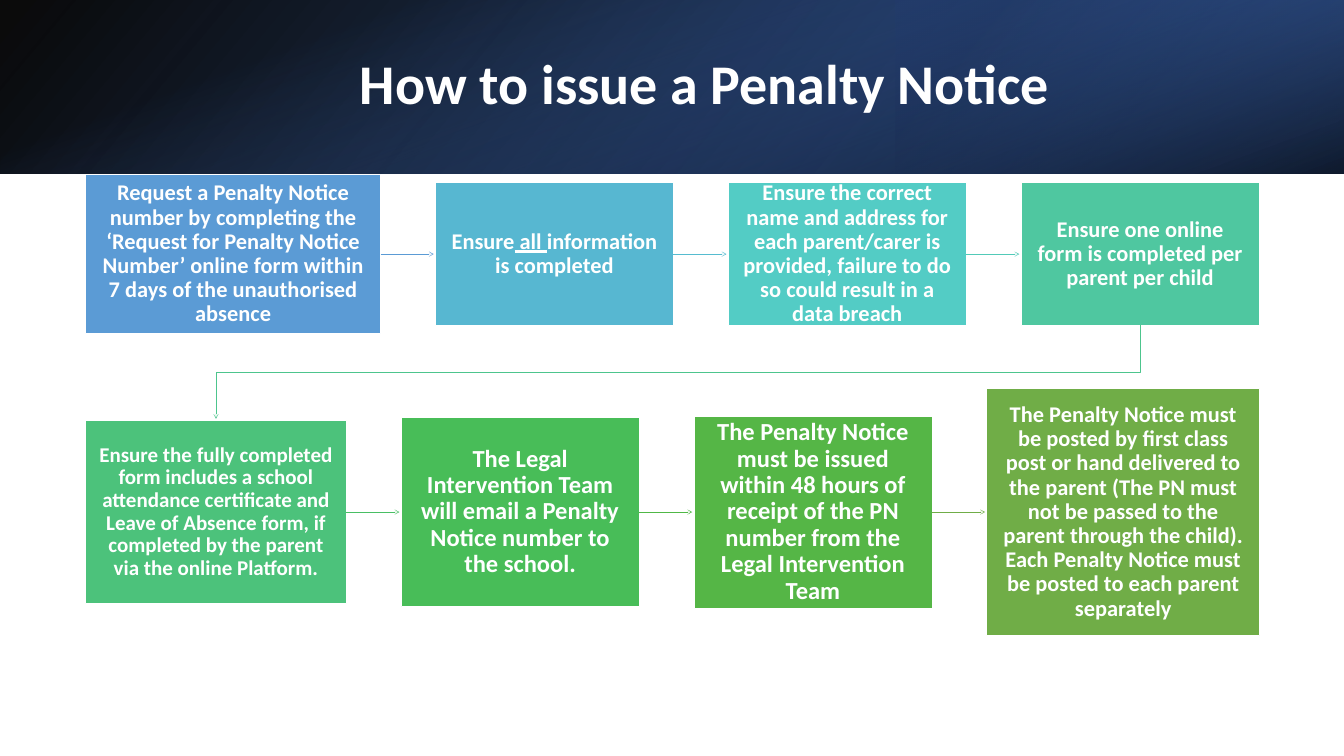
import pptx
import pptx.dml.color
import pptx.enum.shapes
import pptx.enum.text
import pptx.oxml.ns
import pptx.util
from lxml import etree

Pt = pptx.util.Pt
qn = pptx.oxml.ns.qn

COLORS = {
    "white": "FFFFFF", "black": "000000", "navy": "203864",
    "deep_blue": "2F5597", "royal": "4472C4",
    "blue": "5B9BD5", "sky": "57B7D1", "turquoise": "53CCC5", "mint": "4FC7A0",
    "jade": "4CC27B", "emerald": "48BD58", "grass": "55B646", "olive": "70AD47",
    "sky_line": "56BCD0", "turquoise_line": "52CAB8", "mint_line": "4DC58D",
    "emerald_line": "49BF64", "grass_line": "50B846",
}
SLIDE_W, SLIDE_H = 1919.52, 1080
HEADER_H = 248.4
LEFT, GAP = 122.4, 78.4
ARROW_CLEARANCE = 2.5

# Each step: text, width, height, font size, fill, colour of the arrow leaving it
ROWS = [
    (363, [
        ("Request a Penalty Notice number by completing the ‘Request for Penalty "
         "Notice Number’ online form within 7 days of the unauthorised absence",
         421.2, 226.8, 32, "blue", "blue"),
        ("Ensure_ all _information is completed",
         339.8, 204, 32, "sky", "sky_line"),
        ("Ensure the correct name and address for each parent/carer is provided, "
         "failure to do so could result in a data breach",
         339.8, 204, 32, "turquoise", "turquoise_line"),
        ("Ensure one online form is completed per parent per child",
         339.8, 204, 32, "mint", "mint_line"),
    ]),
    (731.5, [
        ("Ensure the fully completed form includes a school attendance certificate "
         "and Leave of Absence form, if completed by the parent via the online "
         "Platform.", 372.2, 261.4, 30, "jade", "emerald_line"),
        ("The Legal Intervention Team will email a Penalty Notice number to the "
         "school.", 339.8, 270.7, 35, "emerald", "grass_line"),
        ("The Penalty Notice must be issued within 48 hours of receipt of the PN "
         "number from the Legal Intervention Team",
         339.8, 274.3, 35, "grass", "olive"),
        ("The Penalty Notice must be posted by first class post or hand delivered "
         "to the parent (The PN must not be passed to the parent through the "
         "child). Each Penalty Notice must be posted to each parent separately",
         389.5, 353.5, 32, "olive", None),
    ]),
]


def rgb(name):
    return pptx.dml.color.RGBColor.from_string(COLORS[name])


def write(tf, text, *, size, font="Calibri", color="white", bold=True,
          spacing=0.9, inset=(7.2, 3.6)):
    """Write one centred paragraph; parts between underscores are underlined."""
    tf.word_wrap = True
    tf.vertical_anchor = pptx.enum.text.MSO_ANCHOR.MIDDLE
    tf.margin_left = tf.margin_right = Pt(inset[0])
    tf.margin_top = tf.margin_bottom = Pt(inset[1])
    p = tf.paragraphs[0]
    p.alignment = pptx.enum.text.PP_ALIGN.CENTER
    p.line_spacing = spacing
    for i, part in enumerate(text.split("_")):
        r = p.add_run()
        r.text = part
        r.font.name, r.font.size, r.font.bold = font, Pt(size), bold
        r.font.color.rgb = rgb(color)
        if i % 2:
            r.font.underline = True


class Deck:
    """Holds the current slide and the drawing style."""
    line_w = 0.5
    border_w = 1
    box_inset = (16.6, 17.3)

    def __init__(self, s):
        self.s = s

    def rect(self, x, y, w, h):
        sp = self.s.shapes.add_shape(
            pptx.enum.shapes.MSO_SHAPE.RECTANGLE, Pt(x), Pt(y), Pt(w), Pt(h))
        sp.shadow.inherit = False
        return sp

    def gradient(self, x, y, w, h, stops, angle, rotation=0, flip=False):
        """Stops are (position, colour, opacity %); the angle runs clockwise."""
        sp = self.rect(x, y, w, h)
        sp.line.fill.background()
        sp.rotation = rotation
        if flip:
            sp._element.spPr.find(qn("a:xfrm")).set("flipH", "1")
        sp.fill.gradient()
        sp.fill.gradient_angle = 360 - angle
        for stop, (position, color, _) in zip(sp.fill.gradient_stops, stops):
            stop.position = position / 100
            stop.color.rgb = rgb(color)
        colors = sp._element.spPr.iter(qn("a:srgbClr"))
        for clr, (_, _, opacity) in zip(list(colors), stops):
            etree.SubElement(clr, qn("a:alpha")).set("val", str(opacity * 1000))

    def title(self, text, x, y, w, h):
        sp = self.s.shapes.add_textbox(Pt(x), Pt(y), Pt(w), Pt(h))
        write(sp.text_frame, text, size=80)

    def box(self, text, x, y, w, h, size, color):
        sp = self.rect(x, y, w, h)
        sp.fill.solid()
        sp.fill.fore_color.rgb = rgb(color)
        sp.line.color.rgb = rgb("white")
        sp.line.width = Pt(self.border_w)
        write(sp.text_frame, text, size=size, inset=self.box_inset)

    def arrow_style(self, sp, color):
        sp.line.color.rgb = rgb(color)
        sp.line.width = Pt(self.line_w)
        ln = sp._element.spPr.find(qn("a:ln"))
        etree.SubElement(ln, qn("a:tailEnd")).set("type", "arrow")

    def arrow(self, x1, x2, y, color):
        sp = self.s.shapes.add_connector(
            pptx.enum.shapes.MSO_CONNECTOR.STRAIGHT, Pt(x1), Pt(y), Pt(x2), Pt(y))
        self.arrow_style(sp, color)
        etree.SubElement(sp._element.spPr, qn("a:effectLst"))

    def bent_arrow(self, points, color):
        pts = [(Pt(x), Pt(y)) for x, y in points]
        fb = self.s.shapes.build_freeform(*pts[0])
        fb.add_line_segments(pts[1:], close=False)
        sp = fb.convert_to_shape()
        sp.shadow.inherit = False
        sp.fill.background()
        self.arrow_style(sp, color)


def main():
    prs = pptx.Presentation()
    prs.slide_width, prs.slide_height = Pt(SLIDE_W), Pt(SLIDE_H)
    deck = Deck(prs.slides.add_slide(prs.slide_layouts[6]))

    # Header band: three layered gradients
    deck.gradient(0, 0, SLIDE_W, HEADER_H,
                  [(0, "black", 96), (100, "deep_blue", 100)], 140, flip=True)
    deck.gradient(SLIDE_W * 2 / 3, 0, SLIDE_W / 3, HEADER_H,
                  [(19, "navy", 68), (100, "royal", 79)], 320,
                  rotation=180, flip=True)
    deck.gradient((SLIDE_W - HEADER_H) / 2, (HEADER_H - SLIDE_W) / 2,
                  HEADER_H, SLIDE_W,
                  [(23, "royal", 0), (99, "black", 74)], 340, rotation=90)
    deck.title("How to issue a Penalty Notice", 216, 54.7, 1581.8, 138.2)

    # Steps, laid out from left to right with equal gaps
    for mid, steps in ROWS:
        x = LEFT
        for i, (text, w, h, size, fill, line) in enumerate(steps):
            deck.box(text, x, mid - h / 2, w, h, size, fill)
            if i < len(steps) - 1:
                deck.arrow(x + w, x + w + GAP - ARROW_CLEARANCE, mid, line)
            x += w + GAP

    # Bent arrow from the end of the first row to the start of the second
    (mid1, row1), (mid2, row2) = ROWS
    _, last_w, last_h, _, _, line = row1[-1]
    _, first_w, first_h, *_ = row2[0]
    start_x = LEFT + sum(step[1] + GAP for step in row1[:-1]) + last_w / 2
    end_x = LEFT + first_w / 2
    top, bottom = mid1 + last_h / 2, mid2 - first_h / 2 - ARROW_CLEARANCE
    turn = (top + bottom) / 2
    deck.bent_arrow([(start_x, top), (start_x, turn), (end_x, turn),
                     (end_x, bottom)], line)

    prs.save("out.pptx")


if __name__ == "__main__":
    main()
